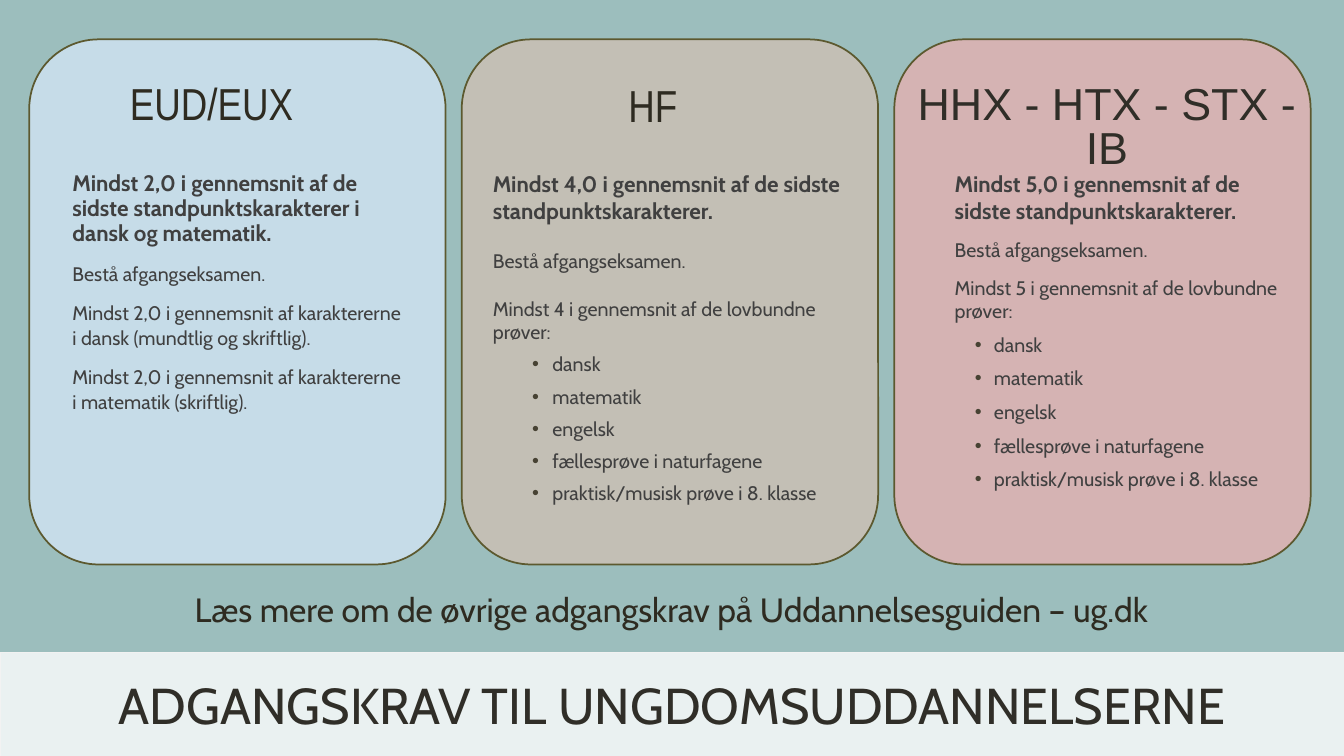
from lxml import etree
from pptx import Presentation
from pptx.dml.color import RGBColor
from pptx.enum.shapes import MSO_SHAPE as SHAPE
from pptx.enum.text import MSO_ANCHOR as ANCHOR, MSO_AUTO_SIZE as AUTO_SIZE, PP_ALIGN as ALIGN
from pptx.oxml.ns import qn
from pptx.util import Inches, Pt

COLORS = {
    "background": "9CBEBD", "band": "FFFFFF", "band_line": "F2F2F2",
    "blue": "C6DCE8", "sand": "C3BFB5", "rose": "D5B3B3", "card_line": "5C592F",
    "title": "302E28", "heading": "2E2B21", "body": "404040", "bullet": "474233",
}


def add_panel(kind, left, top, width, height, fill, line, line_width):
    panel = slide.shapes.add_shape(kind, Inches(left), Inches(top), Inches(width), Inches(height))
    panel.shadow.inherit = False
    panel.fill.solid()
    panel.fill.fore_color.rgb = RGBColor.from_string(COLORS[fill])
    panel.line.color.rgb = RGBColor.from_string(COLORS[line])
    panel.line.width = Pt(line_width)
    return panel


def add_run(paragraph, text, size, font, color, bold=False):
    run = paragraph.add_run()
    run.text = text
    run.font.size = Pt(size)
    run.font.name = font
    run.font.bold = bold
    run.font.color.rgb = RGBColor.from_string(COLORS[color])


presentation = Presentation()
presentation.slide_width = Inches(13.33)
presentation.slide_height = Inches(7.5)
slide = presentation.slides.add_slide(presentation.slide_layouts[6])
slide.background.fill.solid()
slide.background.fill.fore_color.rgb = RGBColor.from_string(COLORS["background"])

band = add_panel(SHAPE.RECTANGLE, 0, 6.47, 13.33, 1.03, "band", "band_line", 0.5)
band_color = band.fill._xPr.find(qn("a:solidFill"))[0]
etree.SubElement(band_color, qn("a:alpha")).set("val", "79000")
band.text_frame.word_wrap = False
band.text_frame.vertical_anchor = ANCHOR.MIDDLE
title = band.text_frame.paragraphs[0]
title.alignment = ALIGN.CENTER
add_run(title, "ADGANGSKRAV TIL UNGDOMSUDDANNELSERNE", 36, "Cabin", "title")

for column, fill in enumerate(["blue", "sand", "rose"]):
    add_panel(SHAPE.ROUNDED_RECTANGLE, 0.29 + column * 4.29, 0.39, 4.13, 5.21, fill, "card_line", 1.25)

headings = [
    ("EUD/EUX", 0.13, 0.81, 3.94, 0.54, 32, "Arial Narrow", "heading", 31),
    ("HF", 4.23, 0.82, 4.49, 0.54, 32, "Arial Narrow", "heading", 31),
    ("HHX - HTX - STX - IB", 8.96, 0.81, 4.04, 0.54, 32, "Arial", "title", 31),
    ("Læs mere om de øvrige adgangskrav på Uddannelsesguiden – ug.dk",
     0.58, 5.79, 12.16, 0.5, 24, "Cabin", "heading", None),
]
for text, left, top, width, height, size, font, color, spacing in headings:
    box = slide.shapes.add_textbox(Inches(left), Inches(top), Inches(width), Inches(height))
    box.text_frame.word_wrap = True
    box.text_frame.auto_size = AUTO_SIZE.SHAPE_TO_FIT_TEXT
    paragraph = box.text_frame.paragraphs[0]
    paragraph.alignment = ALIGN.CENTER
    if spacing:
        paragraph.line_spacing = Pt(spacing)
    add_run(paragraph, text, size, font, color)

exams = ["dansk", "matematik", "engelsk", "fællesprøve i naturfagene", "praktisk/musisk prøve i 8. klasse"]
requirements = [
    {"place": (0.33, 1.64, 3.78, 3.48), "indent": 0.29, "spacing": 18, "gaps": [0, 10, 10, 10],
     "texts": ["Mindst 2,0 i gennemsnit af de sidste standpunktskarakterer i dansk og matematik.",
               "Bestå afgangseksamen.",
               "Mindst 2,0 i gennemsnit af karaktererne i dansk (mundtlig og skriftlig).",
               "Mindst 2,0 i gennemsnit af karaktererne i matematik (skriftlig)."],
     "exams": []},
    {"place": (4.79, 1.64, 3.8, 3.87), "indent": 0, "spacing": None, "gaps": [0, 18, 17],
     "texts": ["Mindst 4,0 i gennemsnit af de sidste standpunktskarakterer.",
               "Bestå afgangseksamen.",
               "Mindst 4 i gennemsnit af de lovbundne prøver:"],
     "exams": exams, "exam_indent": 0.59, "hanging": -0.2, "exam_spacing": 13},
    {"place": (8.98, 1.64, 3.92, 3.52), "indent": 0.39, "spacing": None, "gaps": [0, 10, 10],
     "texts": ["Mindst 5,0 i gennemsnit af de sidste standpunktskarakterer.",
               "Bestå afgangseksamen.",
               "Mindst 5 i gennemsnit af de lovbundne prøver:"],
     "exams": exams, "exam_indent": 0.78, "hanging": -0.19, "exam_spacing": 14},
]
for requirement in requirements:
    box = slide.shapes.add_textbox(*[Inches(length) for length in requirement["place"]])
    frame = box.text_frame
    frame.word_wrap = True
    frame.auto_size = AUTO_SIZE.SHAPE_TO_FIT_TEXT
    for index, (text, gap) in enumerate(zip(requirement["texts"], requirement["gaps"])):
        first = index == 0
        paragraph = frame.paragraphs[0] if first else frame.add_paragraph()
        paragraph._p.get_or_add_pPr().set("marL", str(Inches(requirement["indent"])))
        if gap:
            paragraph.space_before = Pt(gap)
        if requirement["spacing"]:
            paragraph.line_spacing = Pt(requirement["spacing"])
        add_run(paragraph, text, 16 if first else 14, "Cabin", "body", first)
    for exam in requirement["exams"]:
        paragraph = frame.add_paragraph()
        properties = paragraph._p.get_or_add_pPr()
        properties.set("marL", str(Inches(requirement["exam_indent"])))
        properties.set("indent", str(Inches(requirement["hanging"])))
        bullet_color = etree.SubElement(properties, qn("a:buClr"))
        etree.SubElement(bullet_color, qn("a:srgbClr")).set("val", COLORS["bullet"])
        etree.SubElement(properties, qn("a:buFont")).set("typeface", "Arial")
        etree.SubElement(properties, qn("a:buChar")).set("char", "•")
        paragraph.space_before = Pt(10)
        paragraph.line_spacing = Pt(requirement["exam_spacing"])
        add_run(paragraph, exam, 14, "Cabin", "body")

presentation.save("out.pptx")
